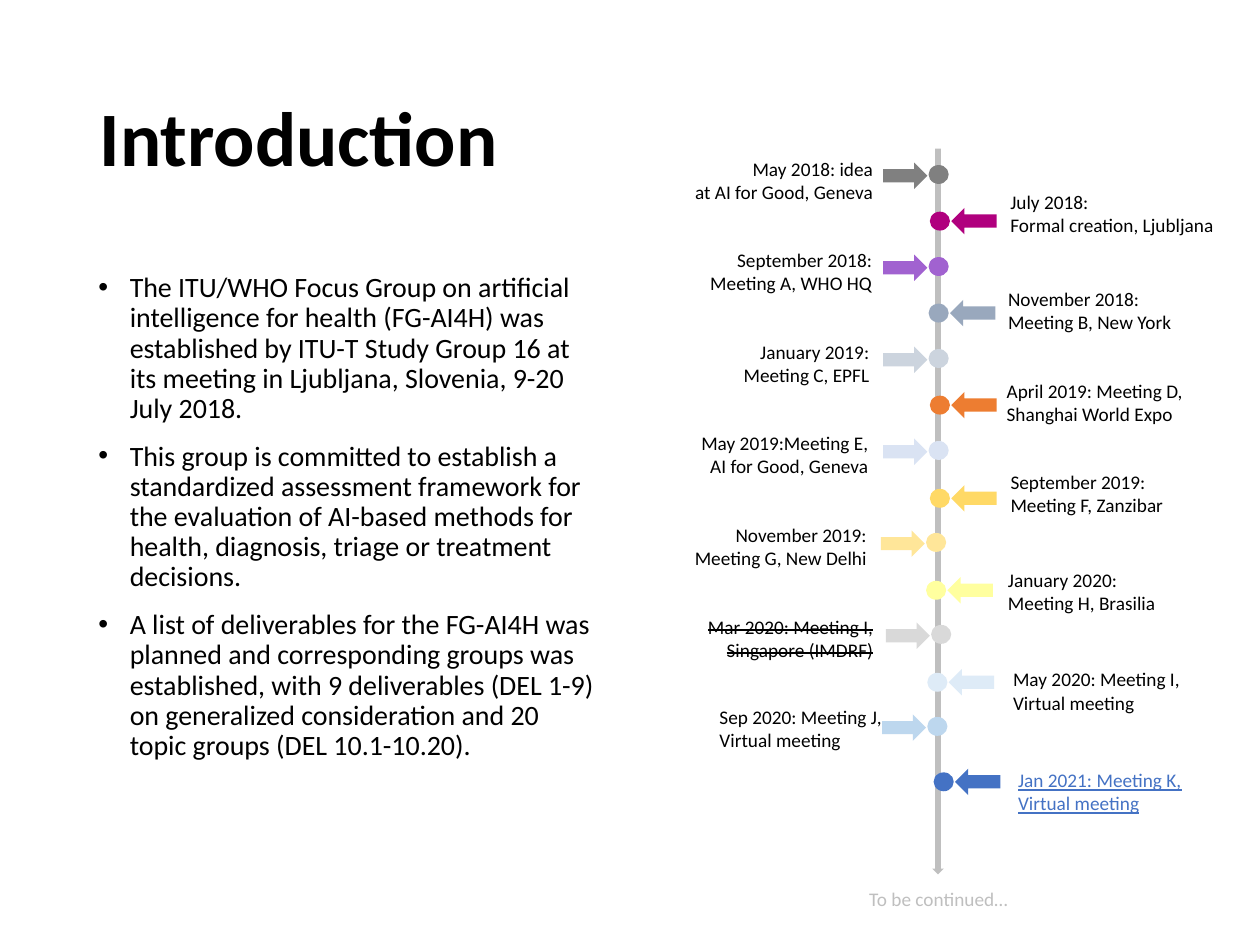
import pptx
import pptx.util
import pptx.dml.color
import pptx.enum.shapes
import pptx.enum.text

Inches = pptx.util.Inches
Pt = pptx.util.Pt
SHAPES = pptx.enum.shapes.MSO_SHAPE
ALIGN = pptx.enum.text.PP_ALIGN

COLORS = {
    "text": "000000", "axis": "BFBFBF", "charcoal": "808080", "magenta": "B0007E",
    "purple": "A162D0", "slate": "99A8BD", "mist": "CCD4DE", "orange": "ED7D31",
    "lavender": "DAE3F3", "gold": "FFD966", "sand": "FFE699", "lemon": "FFFF9F",
    "silver": "D9D9D9", "ice": "DEEBF7", "sky": "BDD7EE", "blue": "4472C4",
}


def add_mark(preset, left, top, width, height, color):
    mark = slide.shapes.add_shape(
        preset, Inches(left), Inches(top), Inches(width), Inches(height))
    mark.shadow.inherit = False
    mark.fill.solid()
    mark.fill.fore_color.rgb = pptx.dml.color.RGBColor.from_string(COLORS[color])
    mark.line.fill.background()


def add_label(text, left, top, width, height, inset, align=ALIGN.LEFT, color="text"):
    label = slide.shapes.add_textbox(
        Inches(left), Inches(top), Inches(width), Inches(height))
    frame = label.text_frame
    frame.word_wrap = True
    frame.margin_left = frame.margin_right = Inches(inset[0])
    frame.margin_top = frame.margin_bottom = Inches(inset[1])
    frame.text = text
    for paragraph in frame.paragraphs:
        paragraph.alignment = align
        paragraph.font.size = Pt(11)
        paragraph.font.name = "Calibri"
        paragraph.font.color.rgb = pptx.dml.color.RGBColor.from_string(COLORS[color])
    return frame


prs = pptx.Presentation()
prs.slide_width, prs.slide_height = Inches(10), Inches(7.5)
slide = prs.slides.add_slide(prs.slide_layouts[1])

# Title
title = slide.shapes.title
title.left, title.top = Inches(0.69), Inches(0.4)
title.width, title.height = Inches(8.62), Inches(1.45)
title.text_frame.text = "Introduction"
title.text_frame.vertical_anchor = pptx.enum.text.MSO_ANCHOR.MIDDLE
heading = title.text_frame.paragraphs[0]
heading.alignment = ALIGN.LEFT
heading.line_spacing = 0.9
heading.font.size = Pt(44)
heading.font.bold = True
heading.font.name = "Calibri"
heading.font.color.rgb = pptx.dml.color.RGBColor.from_string(COLORS["text"])

# Background of the group
background = slide.placeholders[1]
background.left, background.top = Inches(0.68), Inches(2.12)
background.width, background.height = Inches(4.15), Inches(4.76)
background.text_frame.text = "\n".join([
    "The ITU/WHO Focus Group on artificial intelligence for health (FG-AI4H) "
    "was established by ITU-T Study Group 16 at its meeting in Ljubljana, "
    "Slovenia, 9-20 July 2018.",
    "This group is committed to establish a standardized assessment framework for "
    "the evaluation of AI-based methods for health, diagnosis, triage or treatment "
    "decisions.",
    "A list of deliverables for the FG-AI4H was planned and corresponding groups was "
    "established, with 9 deliverables (DEL 1-9) on generalized consideration and 20 "
    "topic groups (DEL 10.1-10.20).",
])
background.text_frame.auto_size = pptx.enum.text.MSO_AUTO_SIZE.NONE
for index, point in enumerate(background.text_frame.paragraphs):
    properties = point._p.get_or_add_pPr()
    properties.set("marL", str(Inches(0.25)))
    properties.set("indent", str(-Inches(0.25)))
    point.line_spacing = 0.9
    point.space_before = Pt(10 if index else 0)
    point.font.size = Pt(16)
    point.font.name = "Calibri"
    point.font.color.rgb = pptx.dml.color.RGBColor.from_string(COLORS["text"])

# Timeline: label, label box, label inset, dot position, colour
NARROW, WIDE = (0.1, 0.05), (0.13, 0.13)
meetings = [
    ("May 2018: idea\vat AI for Good, Geneva",
     (5.38, 1.12, 1.68, 0.69), WIDE, (7.37, 1.31), "charcoal"),
    ("July 2018:\nFormal creation, Ljubljana",
     (7.92, 1.46, 2.06, 0.43), NARROW, (7.38, 1.68), "magenta"),
    ("September 2018:\vMeeting A, WHO HQ",
     (5.47, 1.92, 1.55, 0.43), NARROW, (7.37, 2.04), "purple"),
    ("November 2018:\vMeeting B, New York",
     (7.87, 2.15, 2.25, 0.47), WIDE, (7.37, 2.41), "slate"),
    ("January 2019:\vMeeting C, EPFL",
     (5.66, 2.57, 1.37, 0.69), WIDE, (7.37, 2.77), "mist"),
    ("April 2019: Meeting D,\nShanghai World Expo",
     (7.86, 2.88, 2.26, 0.6), WIDE, (7.38, 3.14), "orange"),
    ("May 2019:Meeting E,\nAI for Good, Geneva",
     (5.44, 3.37, 1.55, 0.43), NARROW, (7.37, 3.5), "lavender"),
    ("September 2019:\vMeeting F, Zanzibar",
     (7.89, 3.6, 1.88, 0.47), WIDE, (7.38, 3.88), "gold"),
    ("November 2019:\vMeeting G, New Delhi",
     (5.35, 4.02, 1.66, 0.69), WIDE, (7.35, 4.23), "sand"),
    ("January 2020: Meeting H, Brasilia",
     (7.87, 4.38, 1.57, 0.6), WIDE, (7.35, 4.61), "lemon"),
    ("Mar 2020: Meeting I, Singapore (IMDRF)",
     (5.45, 4.75, 1.61, 0.6), WIDE, (7.39, 4.96), "silver"),
    ("May 2020: Meeting I, Virtual meeting",
     (7.91, 5.17, 1.61, 0.6), WIDE, (7.36, 5.34), "ice"),
    ("Sep 2020: Meeting J, Virtual meeting",
     (5.58, 5.47, 1.61, 0.6), WIDE, (7.36, 5.69), "sky"),
    ("Jan 2021: Meeting K, Virtual meeting",
     (7.95, 5.97, 1.61, 0.6), WIDE, (7.41, 6.13), "blue"),
]

add_mark(SHAPES.DOWN_ARROW, 7.4, 1.18, 0.09, 5.76, "axis")
for index, (text, box, inset, (dot_left, dot_top), color) in enumerate(meetings):
    on_left = index % 2 == 0
    cancelled = text.startswith("Mar 2020")
    latest = index == len(meetings) - 1

    add_mark(SHAPES.OVAL, dot_left, dot_top, 0.16, 0.15, color)
    if on_left:
        add_mark(SHAPES.RIGHT_ARROW, dot_left - 0.36, dot_top - 0.02, 0.35, 0.21, color)
    else:
        add_mark(SHAPES.LEFT_ARROW, dot_left + 0.17, dot_top - 0.03, 0.36, 0.21, color)

    align = ALIGN.RIGHT if on_left and color != "sky" else ALIGN.LEFT
    label_text = add_label(text, *box, inset, align, "blue" if latest else "text")
    if latest:
        label_text.paragraphs[0].font.underline = True
    if cancelled:
        label_text.paragraphs[0].runs[0]._r.get_or_add_rPr().set("strike", "sngStrike")

outlook = add_label("To be continued…", 6.8, 6.99, 1.32, 0.29, NARROW, color="axis")
outlook.word_wrap = False

prs.save("out.pptx")
